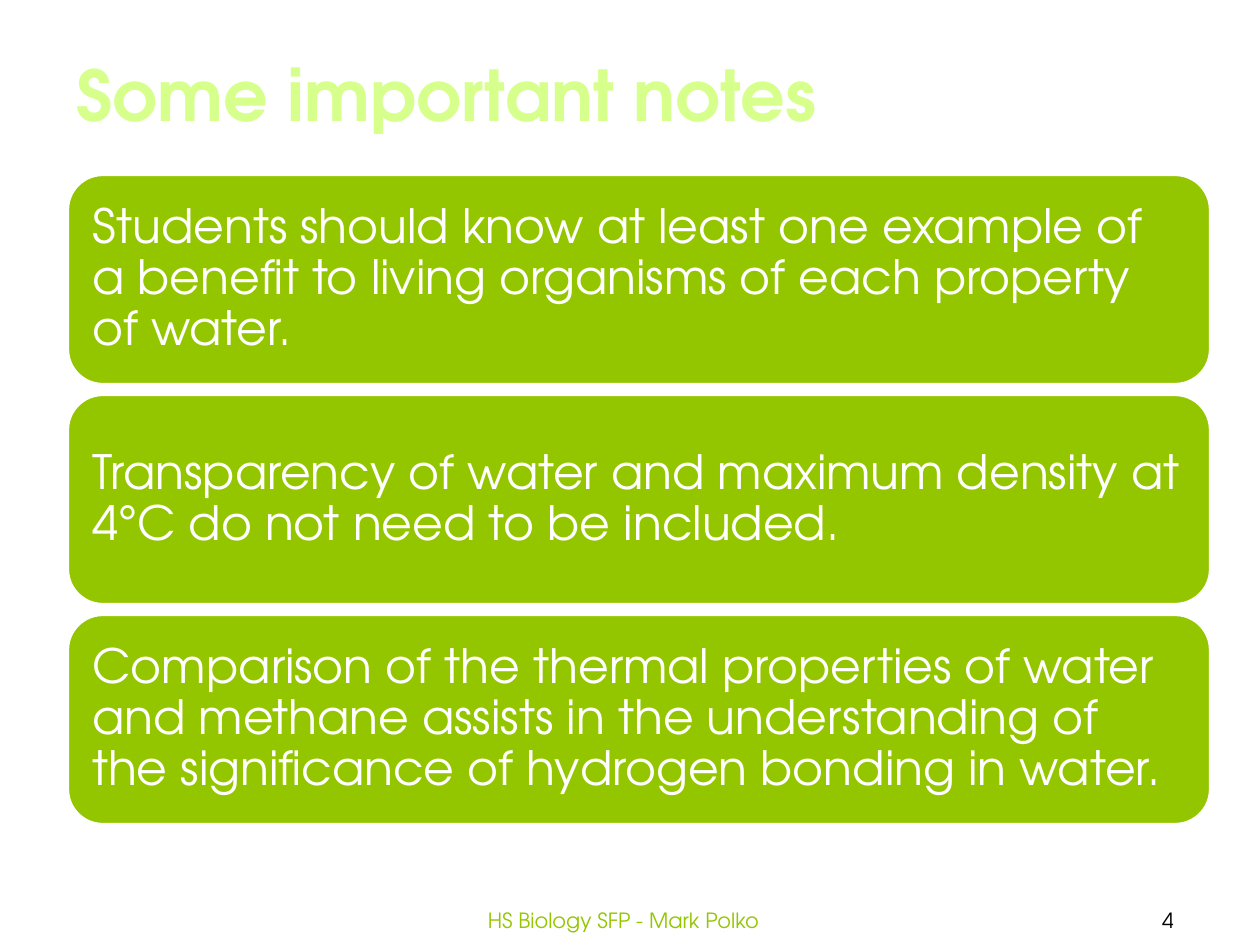
from pptx import Presentation
from pptx.dml.color import RGBColor
from pptx.enum import shapes, text
from pptx.util import Emu, Pt

SCALE = 914400 / 126
FONT = "TeX Gyre Adventor"
COLORS = {"green": "94C600", "lime": "D6FF8C", "white": "FFFFFF", "black": "000000"}
NOTES = [
    "Students should know at least one example of a benefit to living organisms "
    "of each property of water.",
    "Transparency of water and maximum density at 4°C do not need to be included.",
    "Comparison of the thermal properties of water and methane assists in the "
    "understanding of the significance of hydrogen bonding in water.",
]


def px(n):
    return Emu(round(n * SCALE))


def color(name):
    return RGBColor.from_string(COLORS[name])


def write(shape, words, size, tint, align, anchor, bold=False):
    frame = shape.text_frame
    frame.word_wrap = True
    frame.vertical_anchor = anchor
    para = frame.paragraphs[0]
    para.alignment = align
    run = para.add_run()
    run.text = words
    font = run.font
    font.name, font.size, font.bold = FONT, Pt(size), bold
    font.color.rgb = color(tint)
    return frame


def add_label(slide, box, words, size, tint, align=text.PP_ALIGN.CENTER,
              anchor=text.MSO_ANCHOR.MIDDLE, bold=False):
    label = slide.shapes.add_textbox(*map(px, box))
    write(label, words, size, tint, align, anchor, bold)


def add_card(slide, box, words):
    card = slide.shapes.add_shape(shapes.MSO_SHAPE.ROUNDED_RECTANGLE, *map(px, box))
    card.shadow.inherit = False
    card.fill.solid()
    card.fill.fore_color.rgb = color("green")
    card.line.color.rgb = color("white")
    card.line.width = Pt(1.25)
    frame = write(card, words, 27, "white", text.PP_ALIGN.LEFT, text.MSO_ANCHOR.MIDDLE)
    frame.margin_left = frame.margin_right = px(14)
    frame.margin_top = frame.margin_bottom = px(14)
    para = frame.paragraphs[0]
    para.line_spacing = 0.9
    para.space_after = Pt(9)


def main():
    deck = Presentation()
    deck.slide_width, deck.slide_height = px(1260), px(945)
    slide = deck.slides.add_slide(deck.slide_layouts[6])

    # Title
    add_label(slide, (64, 45, 893, 97), "Some important notes", 40, "lime",
              text.PP_ALIGN.LEFT, text.MSO_ANCHOR.TOP, True)

    # Stacked note cards
    for row, note in enumerate(NOTES):
        add_card(slide, (68, 175 + 220 * row, 1142, 209), note)

    # Footer and page number
    add_label(slide, (382, 895, 483, 50), "HS Biology SFP - Mark Polko", 12, "green")
    add_label(slide, (1076, 895, 184, 50), "4", 12, "black")

    deck.save("out.pptx")


if __name__ == "__main__":
    main()
